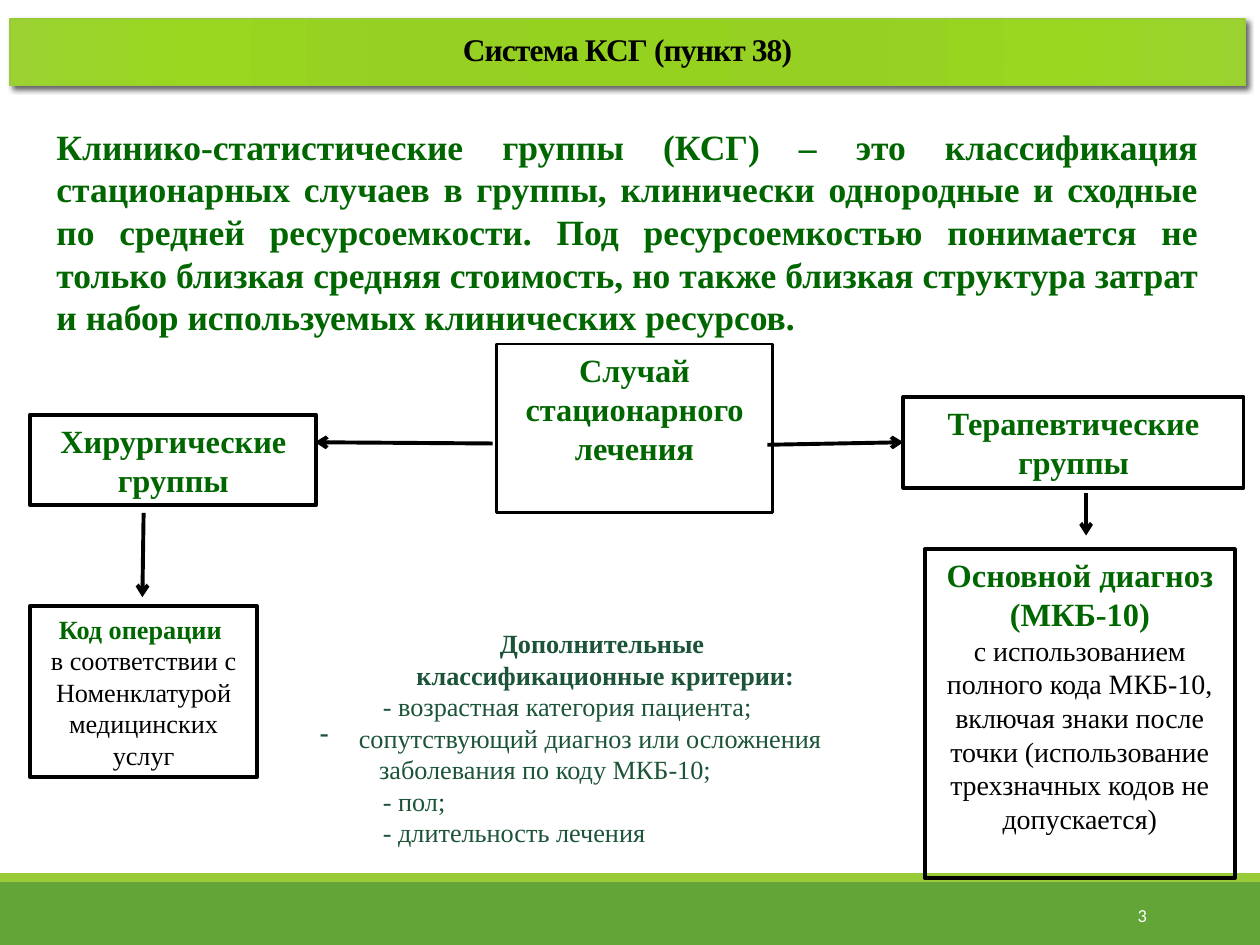
from pptx import Presentation
from pptx.dml.color import RGBColor
from pptx.enum.shapes import MSO_CONNECTOR as Conn, MSO_SHAPE as Shape
from pptx.enum.text import MSO_ANCHOR as Anchor, MSO_AUTO_SIZE as Auto, PP_ALIGN as Align
from pptx.oxml import parse_xml
from pptx.oxml.ns import nsdecls, qn
from pptx.util import Inches, Pt

BLACK, GREEN, DARK_GREEN = "000000", "006600", "1C5438"
SERIF = "Times New Roman"


def color(value):
    return RGBColor.from_string(value)


def write(frame, paragraphs, anchor=Anchor.MIDDLE, align=Align.CENTER, font=SERIF):
    frame_format = {"word_wrap": True, "auto_size": Auto.NONE, "vertical_anchor": anchor}
    for name, value in frame_format.items():
        setattr(frame, name, value)
    for i, (text, size, ink, bold) in enumerate(paragraphs):
        paragraph = frame.paragraphs[0] if i == 0 else frame.add_paragraph()
        paragraph.alignment = align
        run = paragraph.add_run()
        run.text = text
        font_format = {"name": font, "size": Pt(size), "bold": bold}
        for name, value in font_format.items():
            setattr(run.font, name, value)
        run.font.color.rgb = color(ink)


prs = Presentation()
prs.slide_width, prs.slide_height = Inches(10), Inches(7.5)
slide = prs.slides.add_slide(prs.slide_layouts[5])
shapes = slide.shapes

for top, height, fill in [(7, 0.5, "63A537"), (6.93, 0.07, "99CB38")]:
    band = shapes.add_shape(Shape.RECTANGLE, 0, Inches(top), Inches(10), Inches(height))
    band.shadow.inherit = False
    band.fill.solid()
    band.fill.fore_color.rgb = color(fill)
    band.line.fill.background()

title = shapes.title
title_place = {"left": 0.08, "top": 0.15, "width": 9.8, "height": 0.53}
for name, value in title_place.items():
    setattr(title, name, Inches(value))
write(title.text_frame, [("Система КСГ (пункт 38)", 18, BLACK, True)])
heading = title.text_frame.paragraphs[0]
heading.line_spacing = 0.85
heading.runs[0].font._element.set("spc", "-50")
title.fill.gradient()
title.line.color.rgb = color("99CB38")
title.line.width = Pt(1)
title_props = title._element.spPr
stops = [(0, "95D220"), (34, "96D023"), (70, "99D720"), (100, "9BD231")]
stop_xml = "".join(
    f'<a:gs pos="{pos * 1000}"><a:srgbClr val="{shade}"/></a:gs>' for pos, shade in stops)
title_props.replace(title_props.find(qn("a:gradFill")), parse_xml(
    f'<a:gradFill {nsdecls("a")} rotWithShape="1"><a:gsLst>{stop_xml}</a:gsLst>'
    '<a:path path="circle"><a:fillToRect l="100000" t="100000" r="100000" b="100000"/>'
    '</a:path></a:gradFill>'))
title_props.append(parse_xml(
    f'<a:effectLst {nsdecls("a")}><a:outerShdw blurRad="{Pt(3)}" dist="{Pt(2)}" '
    'dir="2700000" algn="ctr" rotWithShape="0"><a:srgbClr val="000000">'
    '<a:alpha val="60000"/></a:srgbClr></a:outerShdw></a:effectLst>'))

definition = shapes.add_textbox(Inches(0.35), Inches(0.93), Inches(9.26), Inches(1.81))
write(definition.text_frame, [(
    "Клинико-статистические группы (КСГ) – это классификация стационарных случаев в группы, "
    "клинически однородные и сходные по средней ресурсоемкости. Под ресурсоемкостью понимается "
    "не только близкая средняя стоимость, но также близкая структура затрат и набор используемых "
    "клинических ресурсов.", 20.3, GREEN, True)], align=Align.JUSTIFY)

boxes = {
    "case": ((3.94, 2.73, 2.19, 1.34), 1.5, Anchor.TOP,
             [("Случай стационарного лечения", 18.5, GREEN, True)]),
    "surgical": ((0.24, 3.29, 2.27, 0.72), 2.25, Anchor.MIDDLE,
                 [("Хирургические группы", 18.5, GREEN, True)]),
    "therapeutic": ((7.17, 3.15, 2.7, 0.72), 2.25, Anchor.MIDDLE,
                    [("Терапевтические группы", 18.5, GREEN, True)]),
    "operation": ((0.24, 4.81, 1.8, 1.36), 2.25, Anchor.MIDDLE,
                  [("Код операции ", 15, GREEN, True),
                   ("в соответствии с Номенклатурой медицинских услуг", 15, BLACK, False)]),
    "diagnosis": ((7.34, 4.36, 2.46, 2.61), 2.25, Anchor.TOP,
                  [("Основной диагноз (МКБ-10)", 18.5, GREEN, True),
                   ("с использованием полного кода МКБ-10, включая знаки после точки "
                    "(использование трехзначных кодов не допускается)", 16, BLACK, False)]),
}
drawn = {}
for key, (place, weight, anchor, paragraphs) in boxes.items():
    box = shapes.add_shape(Shape.RECTANGLE, *map(Inches, place))
    box.shadow.inherit = False
    box.fill.background()
    box.line.color.rgb = color(BLACK)
    box.line.width = Pt(weight)
    write(box.text_frame, paragraphs, anchor)
    drawn[key] = box

arrows = [
    ((6.09, 3.53, 7.17, 3.54), "therapeutic", 1),
    ((8.62, 3.91, 8.62, 4.25), None, None),
    ((3.91, 3.52, 2.5, 3.51), None, None),
    ((1.14, 4.07, 1.13, 4.74), None, None),
]
for ends, target, side in arrows:
    arrow = shapes.add_connector(Conn.STRAIGHT, *map(Inches, ends))
    if target:
        arrow.end_connect(drawn[target], side)
    arrow.line.color.rgb = color(BLACK)
    arrow.line.width = Pt(2.25)
    arrow.line._get_or_add_ln().append(parse_xml(f'<a:tailEnd {nsdecls("a")} type="arrow"/>'))
    arrow._element.spPr.append(parse_xml(f'<a:effectLst {nsdecls("a")}/>'))

criteria_lines = [
    ("Дополнительные ", True, None, 0),
    ("классификационные критерии:", True, None, 0),
    ("- возрастная категория пациента;", False, 0, 0.5),
    ("сопутствующий диагноз или осложнения", False, 0.31, -0.31),
    ("заболевания по коду МКБ-10;", False, 0.47, 0),
    ("- пол;", False, 0, 0.5),
    ("- длительность лечения", False, 0, 0.5),
]
criteria = shapes.add_textbox(Inches(2.44), Inches(4.93), Inches(4.73), Inches(1.87))
write(criteria.text_frame,
      [(text, 15, DARK_GREEN, bold) for text, bold, _, _ in criteria_lines], Anchor.TOP)
for paragraph, (_, _, margin, indent) in zip(criteria.text_frame.paragraphs, criteria_lines):
    if margin is None:
        continue
    paragraph.alignment = Align.LEFT
    props = paragraph._p.get_or_add_pPr()
    props.set("marL", str(Inches(margin)))
    props.set("indent", str(Inches(indent)))
    if indent < 0:
        props.append(parse_xml(f'<a:buChar {nsdecls("a")} char="-"/>'))

page_number = shapes.add_textbox(Inches(8.12), Inches(7.06), Inches(1.08), Inches(0.4))
write(page_number.text_frame, [("3", 10.5, "FFFFFF", False)], align=Align.RIGHT, font="Calibri")

prs.save("out.pptx")
